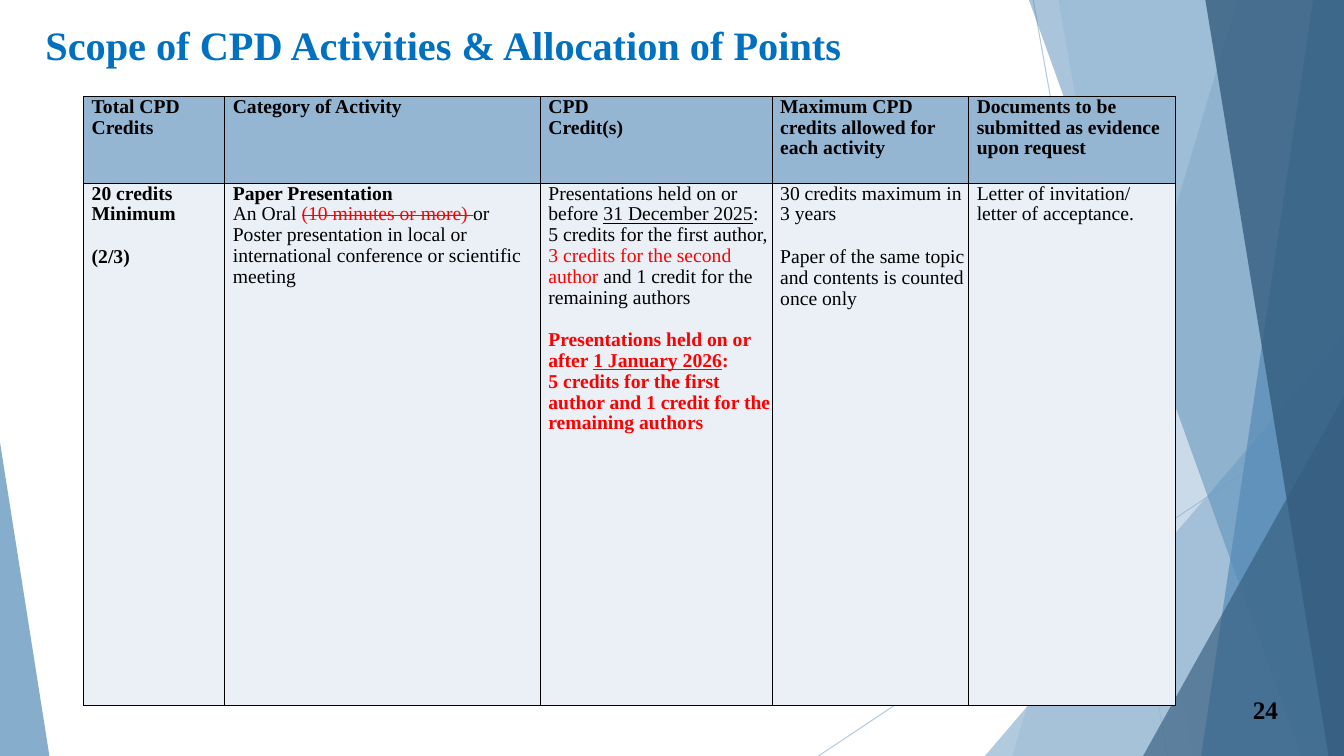
from pptx import Presentation
from pptx.dml.color import RGBColor as RGB
from pptx.enum.shapes import MSO_CONNECTOR as Link, MSO_SHAPE as Form
from pptx.enum.text import MSO_ANCHOR as Anchor, PP_ALIGN as Align
from pptx.oxml.ns import qn
from pptx.util import Pt
from lxml.etree import SubElement as Sub

THEME = {
    "font": "Times New Roman",
    "title": 28.8, "page": 18, "body": 14,
    "blue": "0070C0", "black": "000000", "red": "FF0000",
    "pale": "94B6D2", "mid": "558BB8", "deep": "355D7E", "tint": "EAF0F6",
}
STYLES = {
    "plain": {},
    "bold": {"bold": True},
    "line": {"underline": True},
    "red": {"color": "red"},
    "cut": {"color": "red", "strike": True},
    "new": {"color": "red", "bold": True},
    "newline": {"color": "red", "bold": True, "underline": True},
}

TITLE = "Scope of CPD Activities & Allocation of Points"
PAGE = "24"
HEADS = [
    ["Total CPD", "Credits"],
    ["Category of Activity"],
    ["CPD", "Credit(s)"],
    ["Maximum CPD credits allowed for each activity"],
    ["Documents to be submitted as evidence upon request"],
]
HEAD = [[[[(text, "bold")] for text in lines]] for lines in HEADS]
BODY = [
    [[[("20 credits", "bold")], [("Minimum", "bold")]],
     [[("(2/3)", "bold")]]],
    [[[("Paper Presentation", "bold")],
      [("An Oral ", "plain"), ("(10 minutes or more) ", "cut"),
       ("or Poster presentation in local or international conference "
        "or scientific meeting", "plain")]]],
    [[[("Presentations held on or before ", "plain"),
       ("31 December 2025", "line"), (":", "plain")],
      [("5 credits for the first author, ", "plain"),
       ("3 credits for the second author", "red"),
       (" and 1 credit for the remaining authors", "plain")]],
     [[("Presentations held on or after ", "new"),
       ("1 January 2026", "newline"), (":", "new")],
      [("5 credits for the first author and 1 credit for the "
        "remaining authors", "new")]]],
    [[[("30 credits maximum in 3 years", "plain")]],
     [[("Paper of the same topic and contents is counted once only", "plain")]]],
    [[[("Letter of invitation/ letter of acceptance.", "plain")]]],
]

WIDE, HIGH = 960, 540
COLS = [100.8, 225.4, 165.6, 140.4, 147.6]
ROWS = [62, 372.6]
GRID = (59.8, 69.1)
GAP = 15.5
RAYS = [(738, 0, 834, HIGH), (WIDE, 290, 584.6, HIGH)]
FACETS = [
    ("band", (884, 723), "pale", 36),
    ("band", (756, 852), "pale", 20),
    ("wedge", (703.5, 240, 256.5, 1), "pale", 72),
    ("band", (735, 929.5), "mid", 50),
    ("band", (938, 858), "mid", 70),
    ("band", (861, 949), "deep", 80),
    ("wedge", (816.5, 283, 143.5, 1), "deep", 66),
    ("wedge", (0, 316, 35.3, 0), "mid", 70),
]


def tone(name):
    return RGB.from_string(THEME[name])


def fade(shape, share):
    hue = shape._element.spPr.find(".//" + qn("a:srgbClr"))
    Sub(hue, qn("a:alpha"), val=str(share * 1000))


def write(para, text, size, color="black", strike=False, **form):
    run = para.add_run()
    run.text = text
    look = {"name": THEME["font"], "size": Pt(THEME[size]), "bold": False} | form
    for key, val in look.items():
        setattr(run.font, key, val)
    run.font.color.rgb = tone(color)
    if strike:
        run._r.get_or_add_rPr().set("strike", "sngStrike")


def draw_ray(shapes, ends):
    ray = shapes.add_connector(Link.STRAIGHT, *map(Pt, ends))
    ray.line.width = Pt(0.75)
    ray.line.color.rgb = tone("pale")
    fade(ray, 70)
    Sub(ray._element.spPr, qn("a:effectLst"))


def draw_facet(shapes, kind, dims, color, share):
    if kind == "band":
        top, base = dims
        pen = shapes.build_freeform(Pt(top), 0)
        ends = [(WIDE, 0), (WIDE, HIGH), (base, HIGH)]
        pen.add_line_segments([(Pt(x), Pt(y)) for x, y in ends])
        facet = pen.convert_to_shape()
    else:
        left, top, width, apex = dims
        box = map(Pt, (left, top, width, HIGH - top))
        facet = shapes.add_shape(Form.ISOSCELES_TRIANGLE, *box)
        facet.adjustments[0] = apex
    facet.shadow.inherit = False
    facet.fill.solid()
    facet.fill.fore_color.rgb = tone(color)
    facet.line.fill.background()
    fade(facet, share)


def fill_cell(cell, blocks, color):
    for side in ("left", "right", "top", "bottom"):
        setattr(cell, "margin_" + side, Pt(5.7 if side == "left" else 0))
    props = cell._tc.get_or_add_tcPr()
    for tag in ("a:lnL", "a:lnR", "a:lnT", "a:lnB"):
        edge = Sub(props, qn(tag), w=str(Pt(1)))
        Sub(Sub(edge, qn("a:solidFill")), qn("a:srgbClr"), val=THEME["black"])
    cell.fill.solid()
    cell.fill.fore_color.rgb = tone(color)
    frame = cell.text_frame
    for b, block in enumerate(blocks):
        for p, runs in enumerate(block):
            first = b == p == 0
            para = frame.paragraphs[0] if first else frame.add_paragraph()
            para.line_spacing = 0.96
            if b and not p:
                para.space_before = Pt(GAP)
            for text, style in runs:
                write(para, text, "body", **STYLES[style])


def draw_table(shapes):
    box = map(Pt, (*GRID, sum(COLS), sum(ROWS)))
    table = shapes.add_table(len(ROWS), len(COLS), *box).table
    table.first_row = table.horz_banding = False
    for col, width in zip(table.columns, COLS):
        col.width = Pt(width)
    for row, high, cells, color in zip(table.rows, ROWS, (HEAD, BODY), ("pale", "tint")):
        row.height = Pt(high)
        for cell, blocks in zip(row.cells, cells):
            fill_cell(cell, blocks, color)


def set_text(shape, text, size, color, align, anchor):
    frame = shape.text_frame
    for key, val in {"word_wrap": True, "vertical_anchor": anchor}.items():
        setattr(frame, key, val)
    para = frame.paragraphs[0]
    para.alignment = align
    write(para, text, size, color, bold=True)


def main():
    deck = Presentation()
    deck.slide_width, deck.slide_height = Pt(WIDE), Pt(HIGH)
    slide = deck.slides.add_slide(deck.slide_layouts[5])
    shapes = slide.shapes
    for ends in RAYS:
        draw_ray(shapes, ends)
    for facet in FACETS:
        draw_facet(shapes, *facet)
    title = shapes.title
    spot = {"left": 25.2, "top": 11, "width": 920, "height": 40.3}
    for key, val in spot.items():
        setattr(title, key, Pt(val))
    set_text(title, TITLE, "title", "blue", Align.LEFT, Anchor.TOP)
    page = shapes.add_textbox(*map(Pt, (866, 492, 54, 29)))
    set_text(page, PAGE, "page", "black", Align.RIGHT, Anchor.MIDDLE)
    draw_table(shapes)
    deck.save("out.pptx")


if __name__ == "__main__":
    main()
